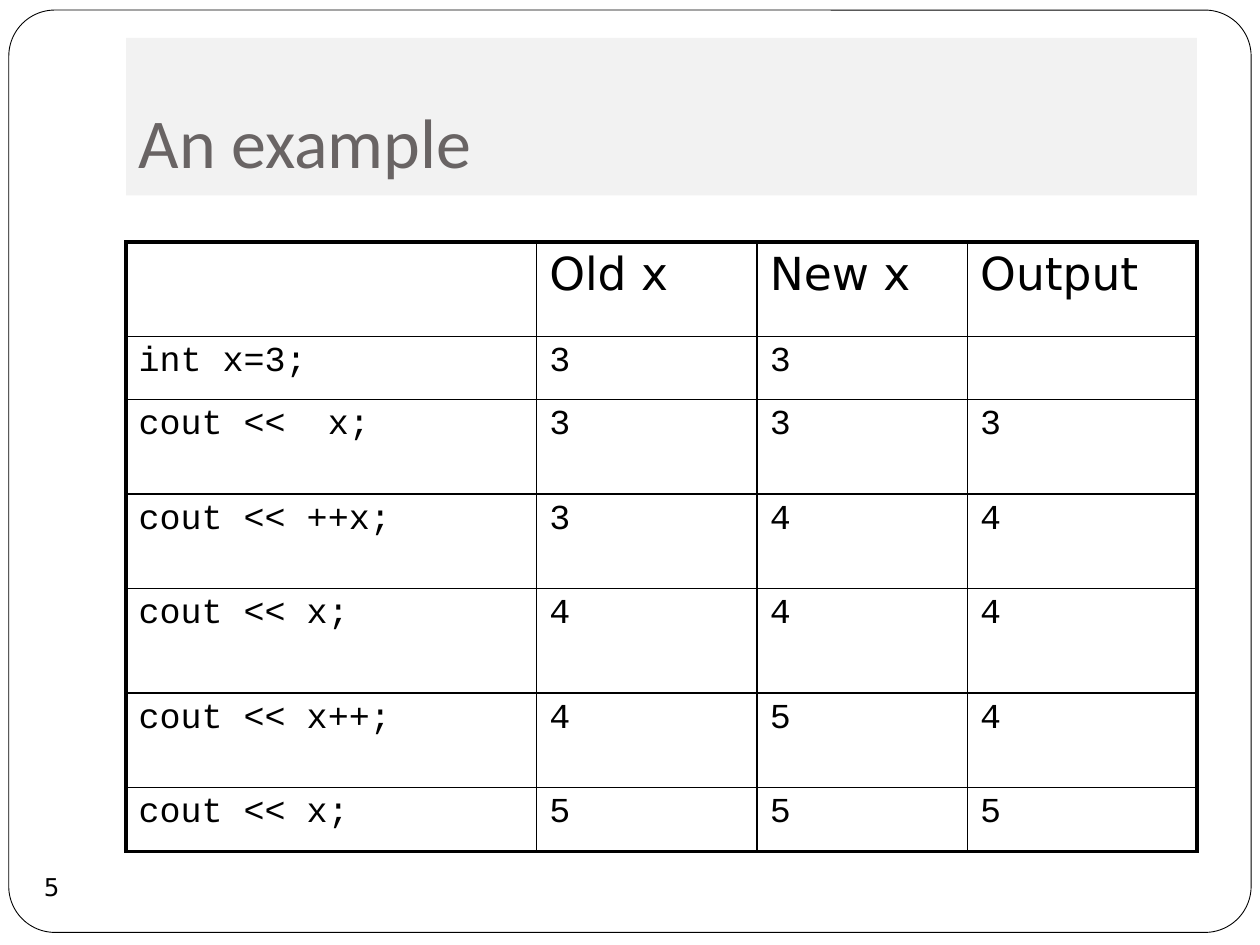
import pptx
import pptx.dml.color
import pptx.enum.shapes
import pptx.enum.text
import pptx.oxml.ns
import pptx.util
from lxml import etree
from pptx.util import Inches

BLACK = pptx.dml.color.RGBColor(0x00, 0x00, 0x00)
WHITE = pptx.dml.color.RGBColor(0xFF, 0xFF, 0xFF)
BAND = pptx.dml.color.RGBColor(0xF2, 0xF2, 0xF2)
TITLE_GREY = pptx.dml.color.RGBColor(0x69, 0x64, 0x64)

SHAPES = pptx.enum.shapes.MSO_SHAPE
ANCHOR = pptx.enum.text.MSO_ANCHOR
ALIGN = pptx.enum.text.PP_ALIGN

COLUMN_WIDTHS = [3.26, 1.75, 1.67, 1.82]
ROW_HEIGHTS = [0.75, 0.5, 0.75, 0.75, 0.83, 0.75, 0.51]
ROWS = [
    ["", "Old x", "New x", "Output"],
    ["int x=3;", "3", "3", ""],
    ["cout <<  x;", "3", "3", "3"],
    ["cout << ++x;", "3", "4", "4"],
    ["cout << x;", "4", "4", "4"],
    ["cout << x++;", "4", "5", "4"],
    ["cout << x;", "5", "5", "5"],
]


class SlideBuilder:
    heading_font = "Calibri"
    body_font = "DejaVu Sans"
    code_font = "Courier New"
    inner_line = 1
    outer_line = 2.25

    def __init__(self, page):
        self.page = page

    def place(self, shape, left, top, width, height):
        shape.left, shape.top = Inches(left), Inches(top)
        shape.width, shape.height = Inches(width), Inches(height)

    def set_text(self, box, text, font, size, color, align=ALIGN.LEFT):
        para = box.paragraphs[0]
        para.text = text
        para.alignment = align
        para.font.name = font
        para.font.size = pptx.util.Pt(size)
        para.font.color.rgb = color

    def shape(self, kind, left, top, width, height):
        shape = self.page.shapes.add_shape(
            kind, Inches(left), Inches(top), Inches(width), Inches(height))
        shape.shadow.inherit = False
        return shape

    def frame(self, *place):
        frame = self.shape(SHAPES.ROUNDED_RECTANGLE, *place)
        frame.adjustments[0] = 0.05
        frame.fill.solid()
        frame.fill.fore_color.rgb = WHITE
        frame.line.color.rgb = BLACK
        frame.line.width = pptx.util.Pt(0.5)
        self.page.shapes.title.element.addprevious(frame.element)

    def title(self, text, *place):
        title = self.page.shapes.title
        self.place(title, *place)
        title.fill.solid()
        title.fill.fore_color.rgb = BAND
        box = title.text_frame
        box.vertical_anchor = ANCHOR.BOTTOM
        box.margin_bottom = Inches(0.1)
        self.set_text(box, text, self.heading_font, 40, TITLE_GREY)

    def page_number(self, text, *place):
        badge = self.shape(SHAPES.OVAL, *place)
        badge.fill.background()
        badge.line.fill.background()
        box = badge.text_frame
        box.word_wrap = False
        box.vertical_anchor = ANCHOR.MIDDLE
        box.margin_left = box.margin_right = 0
        box.margin_top = box.margin_bottom = 0
        self.set_text(box, text, self.body_font, 14, BLACK, ALIGN.CENTER)

    def border(self, cell, side, points):
        properties = cell._tc.get_or_add_tcPr()
        qn = pptx.oxml.ns.qn
        line = etree.SubElement(properties, qn(f"a:ln{side}"),
                                w=str(pptx.util.Pt(points)))
        fill = etree.SubElement(line, qn("a:solidFill"))
        etree.SubElement(fill, qn("a:srgbClr"), val=str(BLACK))

    def table(self, rows, widths, heights, left, top):
        table = self.page.shapes.add_table(
            len(rows), len(widths), Inches(left), Inches(top),
            Inches(sum(widths)), Inches(sum(heights))).table
        table.first_row = table.horz_banding = False
        for column, width in zip(table.columns, widths):
            column.width = Inches(width)
        for row, height in zip(table.rows, heights):
            row.height = Inches(height)
        for r, texts in enumerate(rows):
            for c, text in enumerate(texts):
                cell = table.cell(r, c)
                outer = {"L": c == 0, "R": c == len(widths) - 1,
                         "T": r == 0, "B": r == len(rows) - 1}
                for side, is_outer in outer.items():
                    self.border(cell, side, self.outer_line if is_outer else self.inner_line)
                cell.fill.background()
                if text:
                    font, size = (self.body_font, 26) if r == 0 else (self.code_font, 20)
                    self.set_text(cell.text_frame, text, font, size, BLACK)


def main():
    deck = pptx.Presentation()
    deck.slide_width, deck.slide_height = Inches(10), Inches(7.5)
    builder = SlideBuilder(deck.slides.add_slide(deck.slide_layouts[5]))
    builder.frame(0.07, 0.08, 9.86, 7.32)
    builder.page_number("5", 0.16, 6.79, 0.5, 0.5)
    builder.title("An example", 1, 0.3, 8.5, 1.25)
    builder.table(ROWS, COLUMN_WIDTHS, ROW_HEIGHTS, 1, 1.92)
    deck.save("out.pptx")


if __name__ == "__main__":
    main()
